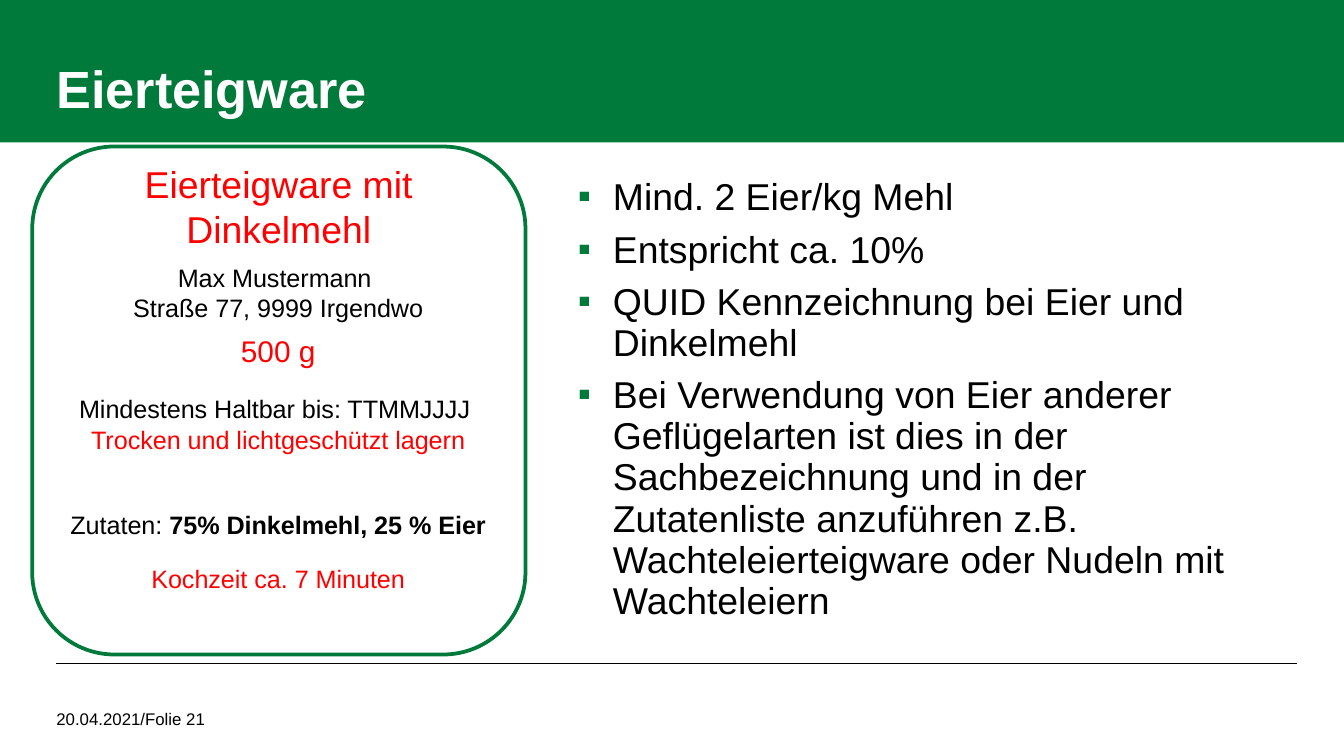
import lxml.etree
import pptx
import pptx.dml.color
import pptx.enum.shapes
import pptx.enum.text
import pptx.oxml.ns
import pptx.util

Inches = pptx.util.Inches
Pt = pptx.util.Pt
Align = pptx.enum.text.PP_ALIGN
Anchor = pptx.enum.text.MSO_ANCHOR
Shape = pptx.enum.shapes.MSO_SHAPE

GREEN = pptx.dml.color.RGBColor(0x00, 0x7A, 0x3B)
RED = pptx.dml.color.RGBColor(0xFF, 0x00, 0x00)
BLACK = pptx.dml.color.RGBColor(0x00, 0x00, 0x00)
WHITE = pptx.dml.color.RGBColor(0xFF, 0xFF, 0xFF)

SLIDE_WIDTH = Inches(10)
SLIDE_HEIGHT = SLIDE_WIDTH * 9 // 16

RULES = [
    "Mind. 2 Eier/kg Mehl",
    "Entspricht ca. 10%",
    "QUID Kennzeichnung bei Eier und Dinkelmehl",
    "Bei Verwendung von Eier anderer Geflügelarten ist dies in der "
    "Sachbezeichnung und in der Zutatenliste anzuführen z.B. "
    "Wachteleierteigware oder Nudeln mit Wachteleiern",
]
CENTERED = {"alignment": Align.CENTER}
LABEL_TEXTS = [
    ((0.36, 1.15, 3.43, 0.77), ["Eierteigware mit Dinkelmehl"], 20, RED, True, CENTERED),
    ((0.56, 1.9, 3.02, 0.56), ["Max Mustermann ", "Straße 77, 9999 Irgendwo"],
     13.5, BLACK, True, CENTERED),
    ((0.49, 2.63, 3.15, 0.58), ["Mindestens Haltbar bis: TTMMJJJJ"],
     13.5, BLACK, False, {"line_spacing": Pt(34)}),
    ((0.56, 3.11, 3.02, 0.33), ["Trocken und lichtgeschützt lagern"],
     13.5, RED, False, CENTERED),
    ((1.69, 2.43, 0.76, 0.37), ["500 g"], 16, RED, False, CENTERED),
    ((1.01, 4.14, 2.12, 0.33), ["Kochzeit ca. 7 Minuten"], 13.5, RED, False, CENTERED),
]


def apply_format(target, values):
    for name, value in values.items():
        setattr(target, name, value)


def set_frame(frame, insets=(0.1, 0.05, 0.1, 0.05), anchor=Anchor.TOP, wrap=True):
    sides = ("margin_left", "margin_top", "margin_right", "margin_bottom")
    apply_format(frame, dict(zip(sides, map(Inches, insets))))
    apply_format(frame, {"vertical_anchor": anchor, "word_wrap": wrap})


def add_run(paragraph, text, size, color, bold=False):
    run = paragraph.add_run()
    run.text = text
    apply_format(run.font, {"name": "Arial", "size": Pt(size), "bold": bold})
    run.font.color.rgb = color


def write_paragraphs(frame, lines, size, color, bold=False, layout=None):
    for index, line in enumerate(lines):
        paragraph = frame.add_paragraph() if index else frame.paragraphs[0]
        apply_format(paragraph, layout or {})
        add_run(paragraph, line, size, color, bold)


def add_text(slide, box, lines, size, color, wrap=True, layout=None, **frame_format):
    frame = slide.shapes.add_textbox(*map(Inches, box)).text_frame
    set_frame(frame, wrap=wrap, **frame_format)
    write_paragraphs(frame, lines, size, color, layout=layout)
    return frame


def add_panel(slide, kind, box, fill, border=None):
    panel = slide.shapes.add_shape(kind, *map(Inches, box))
    panel.shadow.inherit = False
    panel.fill.solid()
    panel.fill.fore_color.rgb = fill
    if border is None:
        panel.line.fill.background()
    else:
        panel.line.color.rgb = border
        panel.line.width = Pt(2)
    return panel


def add_header(slide, title):
    header = add_panel(slide, Shape.RECTANGLE, (0, 0, 10, 1.06), GREEN)
    set_frame(header.text_frame, (0.42, 0.2, 0.42, 0.16), Anchor.BOTTOM)
    write_paragraphs(header.text_frame, [title], 28, WHITE, True,
                     {"alignment": Align.LEFT, "line_spacing": 0.95})


def add_footer_line(slide):
    rule = slide.shapes.add_connector(
        pptx.enum.shapes.MSO_CONNECTOR.STRAIGHT,
        *map(Inches, (0.42, 4.94, 9.65, 4.94)))
    rule.line.color.rgb = BLACK
    rule.line.width = Pt(0.5)
    lxml.etree.SubElement(rule._element.spPr, pptx.oxml.ns.qn("a:effectLst"))


def add_bullet(paragraph):
    qn = pptx.oxml.ns.qn
    properties = paragraph._p.get_or_add_pPr()
    properties.set("marL", str(Inches(0.32)))
    properties.set("indent", str(Inches(-0.26)))
    color = lxml.etree.SubElement(properties, qn("a:buClr"))
    lxml.etree.SubElement(color, qn("a:srgbClr"), val=str(GREEN))
    lxml.etree.SubElement(properties, qn("a:buFont"), typeface="Arial")
    lxml.etree.SubElement(properties, qn("a:buChar"), char="▪")


def add_rules(slide):
    frame = add_text(slide, (4.24, 1.32, 5.35, 3.27), RULES, 20, BLACK,
                     insets=(0, 0, 0, 0),
                     layout={"level": 1, "line_spacing": Pt(22), "space_after": Pt(6)})
    for paragraph in frame.paragraphs:
        add_bullet(paragraph)


def add_product_label(slide):
    add_panel(slide, Shape.ROUNDED_RECTANGLE, (0.24, 1.09, 3.67, 3.78), WHITE, GREEN)
    for box, lines, size, color, wrap, layout in LABEL_TEXTS:
        add_text(slide, box, lines, size, color, wrap, layout)
    ingredients = add_text(slide, (0.4, 3.74, 3.34, 0.33), ["Zutaten: "],
                           13.5, BLACK, False, CENTERED)
    add_run(ingredients.paragraphs[0], "75% Dinkelmehl, 25 % Eier", 13.5, BLACK, True)


def main():
    deck = pptx.Presentation()
    apply_format(deck, {"slide_width": SLIDE_WIDTH, "slide_height": SLIDE_HEIGHT})
    slide = deck.slides.add_slide(deck.slide_layouts[6])
    add_footer_line(slide)
    add_header(slide, "Eierteigware")
    add_rules(slide)
    add_text(slide, (0.42, 5.15, 5.36, 0.38), ["20.04.2021/Folie 21"], 9, BLACK,
             insets=(0, 0, 0, 0), anchor=Anchor.MIDDLE,
             layout={"line_spacing": Pt(12)})
    add_product_label(slide)
    deck.save("out.pptx")


if __name__ == "__main__":
    main()
